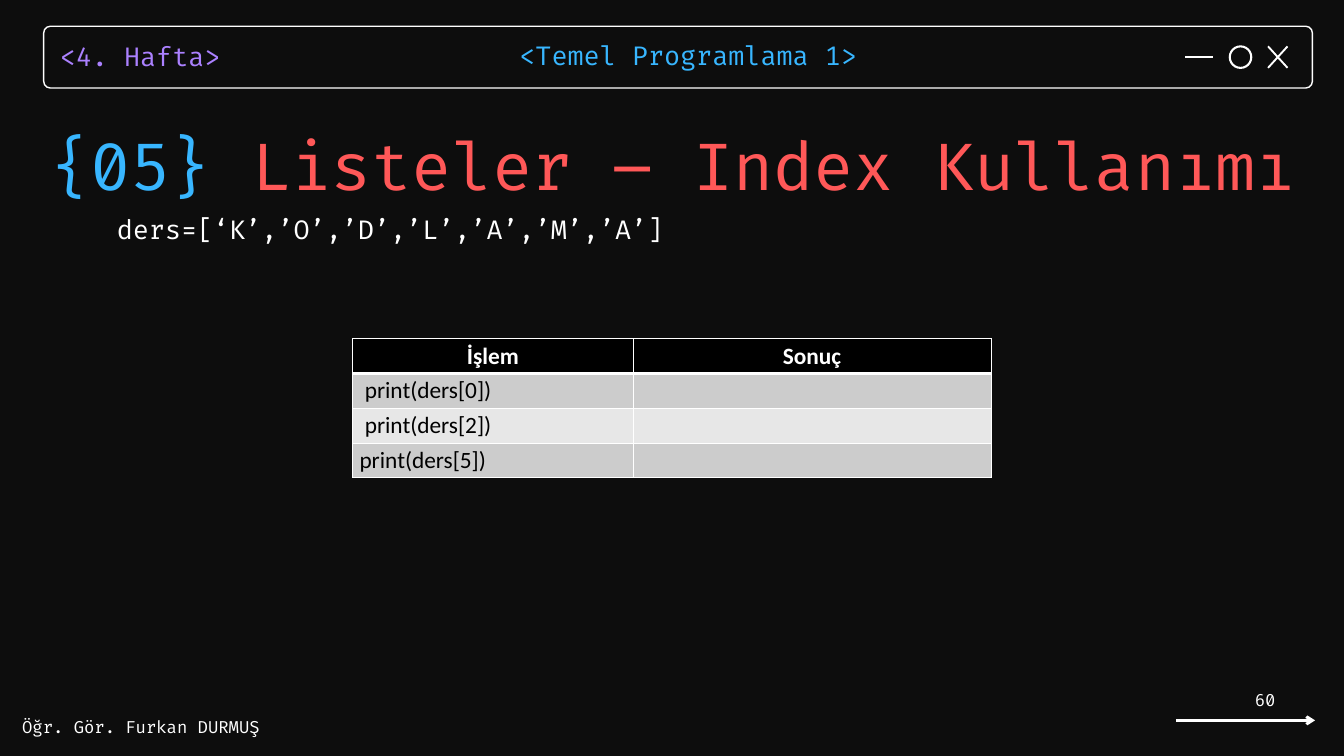
from dataclasses import dataclass

from lxml import etree
from pptx import Presentation
from pptx import util as u
from pptx.dml.color import RGBColor
from pptx.enum import shapes, text
from pptx.oxml.ns import qn

In = u.Inches
Align = text.PP_ALIGN


@dataclass(frozen=True)
class Theme:
    code: str = "Fira Code"
    plain: str = "Calibri"
    back: str = "0D0D0D"
    white: str = "FFFFFF"
    black: str = "000000"
    blue: str = "38B6FF"
    red: str = "FF5858"
    violet: str = "AB81FF"
    bands: tuple = ("CCCCCC", "E7E7E7")
    title: float = 70
    body: float = 28
    cell: float = 25
    small: float = 18


T = Theme()


def paint(fill, color):
    fill.solid()
    fill.fore_color.rgb = RGBColor.from_string(color)


def write(frame, *runs, size=T.small, font=T.code, bold=False,
          align=Align.LEFT, lead=None):
    """Fill the first paragraph with (words, colour) runs."""
    para = frame.paragraphs[0]
    para.alignment = align
    if lead:
        para.line_spacing = u.Pt(lead)
    for words, color in runs:
        run = para.add_run()
        run.text = words
        run.font.size = u.Pt(size)
        run.font.name = font
        run.font.bold = bold
        run.font.color.rgb = RGBColor.from_string(color)


def trim(frame):
    """Wrap the text, with no margins, from the top of its box."""
    frame.word_wrap = True
    frame.auto_size = text.MSO_AUTO_SIZE.SHAPE_TO_FIT_TEXT
    frame.vertical_anchor = text.MSO_ANCHOR.TOP
    frame.margin_left = frame.margin_right = 0
    frame.margin_top = frame.margin_bottom = 0


def label(slide, box, *runs, **style):
    frame = slide.shapes.add_textbox(*map(In, box)).text_frame
    trim(frame)
    write(frame, *runs, **style)
    return frame


def rule(slide, x1, y1, x2, y2, width=2):
    line = slide.shapes.add_connector(
        shapes.MSO_CONNECTOR.STRAIGHT, In(x1), In(y1), In(x2), In(y2))
    line.line.width = u.Pt(width)
    paint(line.line.fill, T.white)
    etree.SubElement(line._element.spPr, qn("a:effectLst"))
    return line


def ring(slide, kind, box, width):
    """Draw an outlined shape without a fill."""
    shape = slide.shapes.add_shape(kind, *map(In, box))
    shape.shadow.inherit = False
    shape.fill.background()
    shape.line.width = u.Pt(width)
    paint(shape.line.fill, T.white)
    return shape


def window_bar(slide, x, y, w, h):
    frame = ring(slide, shapes.MSO_SHAPE.ROUNDED_RECTANGLE, (x, y, w, h), 1.5)
    frame.adjustments[0] = 0.1 / h
    label(slide, (x + 0.24, y + 0.13, 3.4, 0.53), ("<4. Hafta>", T.violet),
          size=T.body, lead=39.2)
    label(slide, (x + 7.08, y + 0.12, 5.29, 0.53),
          ("<Temel Programlama 1>", T.blue), size=T.body, lead=39.2)

    side = 0.32
    top, mid, low = y + 0.3, y + h / 2, y + 0.3 + side
    left, right = x + w - 0.66, x + w - 0.37
    rule(slide, x + w - 1.89, mid, x + w - 1.48, mid)
    ring(slide, shapes.MSO_SHAPE.OVAL, (x + w - 1.23, top, side, side), 2.25)
    rule(slide, left, top, right, low)
    rule(slide, right, top, left, low)


def heading(slide, x, y, w, h):
    title = slide.shapes.title
    title.left, title.top, title.width, title.height = map(In, (x, y, w, h))
    trim(title.text_frame)
    write(title.text_frame, ("{05}", T.blue),
          (" Listeler – Index Kullanımı", T.red), size=T.title, lead=102.6)


def code_line(slide, *box):
    label(slide, box, (" ders=[‘K’,’O’,’D’,’L’,’A’,’M’,’A’]", T.white),
          size=T.body, align=Align.JUSTIFY)


def border(cell, **widths):
    props = cell._tc.get_or_add_tcPr()
    for place, side in enumerate("LRTB"):
        line = etree.Element(qn(f"a:ln{side}"), w=str(u.Pt(widths.get(side, 1))))
        fill = etree.SubElement(line, qn("a:solidFill"))
        etree.SubElement(fill, qn("a:srgbClr"), val=T.white)
        props.insert(place, line)


def result_table(slide, x, y, w, h):
    rows = (("İşlem", "Sonuç"), (" print(ders[0])", ""),
            (" print(ders[2])", ""), ("print(ders[5])", ""))
    table = slide.shapes.add_table(
        len(rows), 2, In(x), In(y), In(w), In(h)).table
    first = 4.17
    table.columns[0].width = In(first)
    table.columns[1].width = In(w - first)
    for r, row in enumerate(rows):
        head = r == 0
        for c, words in enumerate(row):
            cell = table.cell(r, c)
            paint(cell.fill, T.black if head else T.bands[(r - 1) % 2])
            border(cell, T=3 if r == 1 else 1, B=3 if head else 1)
            if words:
                write(cell.text_frame, (words, T.white if head else T.black),
                      size=T.cell, font=T.plain, bold=head,
                      align=Align.CENTER if head else Align.LEFT)


def footer(slide, x, y, w, h):
    label(slide, (x, y + 0.46, 3.67, 0.3),
          ("Öğr. Gör. Furkan DURMUŞ", T.white))
    page = slide.shapes.add_textbox(
        In(x + w - 2.82), In(y), In(2.33), In(0.4)).text_frame
    page.word_wrap = True
    page.vertical_anchor = text.MSO_ANCHOR.MIDDLE
    write(page, ("60", T.white), align=Align.RIGHT)
    arrow = rule(slide, x + w - 2.07, y + 0.51, x + w, y + 0.51, 3)
    etree.SubElement(arrow.line._get_or_add_ln(), qn("a:tailEnd"), type="arrow")


def main():
    deck = Presentation()
    deck.slide_width, deck.slide_height = In(20), In(11.25)
    slide = deck.slides.add_slide(deck.slide_layouts[5])
    paint(slide.background.fill, T.back)
    window_bar(slide, 0.65, 0.39, 18.88, 0.92)
    heading(slide, 0.75, 1.61, 19.25, 1.37)
    code_line(slide, 1.5, 3.17, 17.37, 0.47)
    result_table(slide, 5.25, 5.04, 9.5, 1.64)
    footer(slide, 0.33, 10.21, 19.24, 0.76)
    deck.save("out.pptx")


if __name__ == "__main__":
    main()
